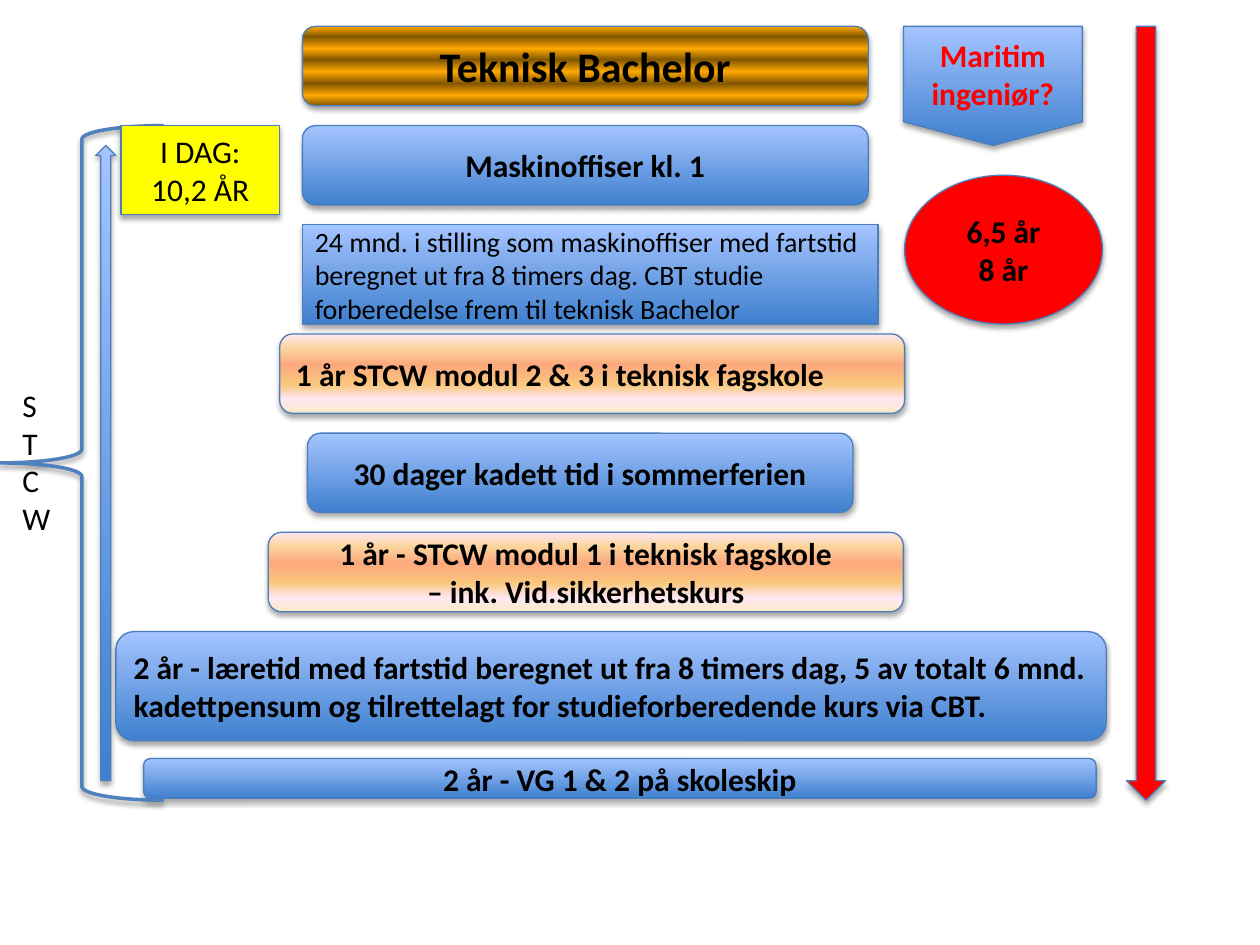
import dataclasses
import typing

import lxml.etree
import pptx
import pptx.dml.color
import pptx.enum.shapes
import pptx.enum.text
import pptx.oxml.ns
import pptx.util

Shape = pptx.enum.shapes.MSO_SHAPE
Align = pptx.enum.text.PP_ALIGN
Anchor = pptx.enum.text.MSO_ANCHOR
Stops = tuple[tuple[int, str], ...]
Paint = typing.Union[str, Stops, None]


@dataclasses.dataclass(frozen=True)
class Theme:
    font: str = "Calibri"
    heading: int = 24
    body: int = 18
    detail: int = 16
    ink: str = "000000"
    red: str = "FF0000"
    yellow: str = "FFFF00"
    outline: str = "4B7EBC"
    brace: str = "4F81BD"
    blue: Stops = ((0, "3F80CE"), (100, "A4C4FF"))
    peach: Stops = ((0, "FBEAC7"), (18, "FEE7F2"), (36, "FAC77D"),
                    (61, "FBA97D"), (82, "FBD49C"), (100, "FEE7F2"))
    gold: Stops = tuple(zip((0, 13, 28, 43, 58, 72, 87, 100), ("825600", "FFA800") * 4))


THEME = Theme()
WIDTH, HEIGHT = 10, 7.5
COLUMN = WIDTH / 100
ROW = HEIGHT / 95.25
TOP = 0.21


@dataclasses.dataclass(frozen=True)
class Area:
    column: float
    row: float
    columns: float
    rows: float

    def place(self) -> list[int]:
        lengths = (self.column * COLUMN, TOP + self.row * ROW,
                   self.columns * COLUMN, self.rows * ROW)
        return [pptx.util.Inches(length) for length in lengths]


@dataclasses.dataclass(frozen=True)
class Item:
    kind: Shape
    area: Area
    paint: Paint = THEME.blue
    lines: tuple[str, ...] = ()
    size: int = THEME.body
    color: str = THEME.ink
    bold: bool = True
    align: Align = Align.CENTER
    outline: str = THEME.outline
    weight: float = 0.75
    shadow: tuple[int, float] = (35, 1.8)


STEPS = (
    Item(Shape.ROUNDED_RECTANGLE, Area(24, 0, 44.9, 8), THEME.gold,
         ("Teknisk Bachelor",), size=THEME.heading),
    Item(Shape.ROUNDED_RECTANGLE, Area(24, 10, 44.9, 8), lines=("Maskinoffiser kl. 1",)),
    Item(Shape.RECTANGLE, Area(24, 20, 45.7, 10),
         lines=("24 mnd. i stilling som maskinoffiser med fartstid beregnet ut fra "
                "8 timers dag. CBT studie forberedelse frem til teknisk Bachelor",),
         size=THEME.detail, bold=False, align=Align.LEFT),
    Item(Shape.ROUNDED_RECTANGLE, Area(22.2, 31, 49.6, 8), THEME.peach,
         ("1 år STCW modul 2 & 3 i teknisk fagskole",), align=Align.LEFT),
    Item(Shape.ROUNDED_RECTANGLE, Area(24.4, 41, 43.3, 8),
         lines=("30 dager kadett tid i sommerferien",)),
    Item(Shape.ROUNDED_RECTANGLE, Area(21.3, 51, 50.4, 8), THEME.peach,
         ("1 år - STCW modul 1 i teknisk fagskole", "– ink. Vid.sikkerhetskurs")),
    Item(Shape.ROUNDED_RECTANGLE, Area(9.2, 61, 78.6, 11),
         lines=("2 år - læretid med fartstid beregnet ut fra 8 timers dag, 5 av totalt 6 "
                "mnd. kadettpensum og tilrettelagt for studieforberedende kurs via CBT.",),
         align=Align.LEFT),
    Item(Shape.ROUNDED_RECTANGLE, Area(11.4, 73.8, 75.6, 4),
         lines=("2 år - VG 1 & 2 på skoleskip",)),
    Item(Shape.FLOWCHART_OFFPAGE_CONNECTOR, Area(71.7, 0, 14.2, 12),
         lines=("Maritim ingeniør?",), color=THEME.red),
    Item(Shape.LEFT_BRACE, Area(0, 10, 13, 68), None,
         outline=THEME.brace, weight=2, shadow=(38, 1.6)),
)
DURATIONS = (
    Item(Shape.RECTANGLE, Area(9.6, 10, 12.6, 9), THEME.yellow,
         ("I DAG: 10,2 ÅR",), bold=False),
    Item(Shape.OVAL, Area(71.8, 15, 15.7, 15), THEME.red, ("6,5 år", "8 år")),
    Item(Shape.UP_ARROW, Area(7.6, 12, 1.6, 64)),
    Item(Shape.DOWN_ARROW, Area(89.4, 0, 3.1, 78), THEME.red),
)
STCW = Area(0.8, 35.6, 2.8, 16.7)


def rgb(color: str) -> pptx.dml.color.RGBColor:
    return pptx.dml.color.RGBColor.from_string(color)


def add_node(parent, tag: str, **attributes):
    node = lxml.etree.SubElement(parent, pptx.oxml.ns.qn(tag))
    for name, value in attributes.items():
        node.set(name, str(value))
    return node


def write_text(frame, lines: typing.Iterable[str], *, size: int = THEME.body,
               color: str = THEME.ink, bold: bool = False,
               align: Align = Align.LEFT, anchor: Anchor = Anchor.TOP) -> None:
    frame.word_wrap = True
    frame.vertical_anchor = anchor
    for index, line in enumerate(lines):
        para = frame.add_paragraph() if index else frame.paragraphs[0]
        para.alignment = align
        span = para.add_run()
        span.text = line
        span.font.name = THEME.font
        span.font.size = pptx.util.Pt(size)
        span.font.bold = bold
        span.font.color.rgb = rgb(color)


def paint_fill(box, paint: Paint) -> None:
    if paint is None:
        box.fill.background()
    elif isinstance(paint, str):
        box.fill.solid()
        box.fill.fore_color.rgb = rgb(paint)
    else:
        box.fill.gradient()
        box.fill.gradient_angle = 90
        stops = box.element.spPr.find(".//" + pptx.oxml.ns.qn("a:gsLst"))
        for stop in list(stops):
            stops.remove(stop)
        for position, color in paint:
            stop = add_node(stops, "a:gs", pos=position * 1000)
            add_node(stop, "a:srgbClr", val=color)


def cast_shadow(box, opacity: int, distance: float) -> None:
    box.shadow.inherit = False
    effects = box.element.spPr.find(pptx.oxml.ns.qn("a:effectLst"))
    shadow = add_node(effects, "a:outerShdw", blurRad=pptx.util.Pt(3.1),
                      dist=pptx.util.Pt(distance), dir=90 * 60000, rotWithShape=0)
    tint = add_node(shadow, "a:srgbClr", val=THEME.ink)
    add_node(tint, "a:alpha", val=opacity * 1000)


def draw_item(page, item: Item) -> None:
    box = page.shapes.add_shape(item.kind, *item.area.place())
    paint_fill(box, item.paint)
    box.line.color.rgb = rgb(item.outline)
    box.line.width = pptx.util.Pt(item.weight)
    cast_shadow(box, *item.shadow)
    write_text(box.text_frame, item.lines, size=item.size, color=item.color,
               bold=item.bold, align=item.align, anchor=Anchor.MIDDLE)


def main() -> None:
    deck = pptx.Presentation()
    deck.slide_width = pptx.util.Inches(WIDTH)
    deck.slide_height = pptx.util.Inches(HEIGHT)
    page = deck.slides.add_slide(deck.slide_layouts.get_by_name("Blank"))
    for item in STEPS:
        draw_item(page, item)
    label = page.shapes.add_textbox(*STCW.place())
    write_text(label.text_frame, "STCW")
    for item in DURATIONS:
        draw_item(page, item)
    deck.save("out.pptx")


if __name__ == "__main__":
    main()
